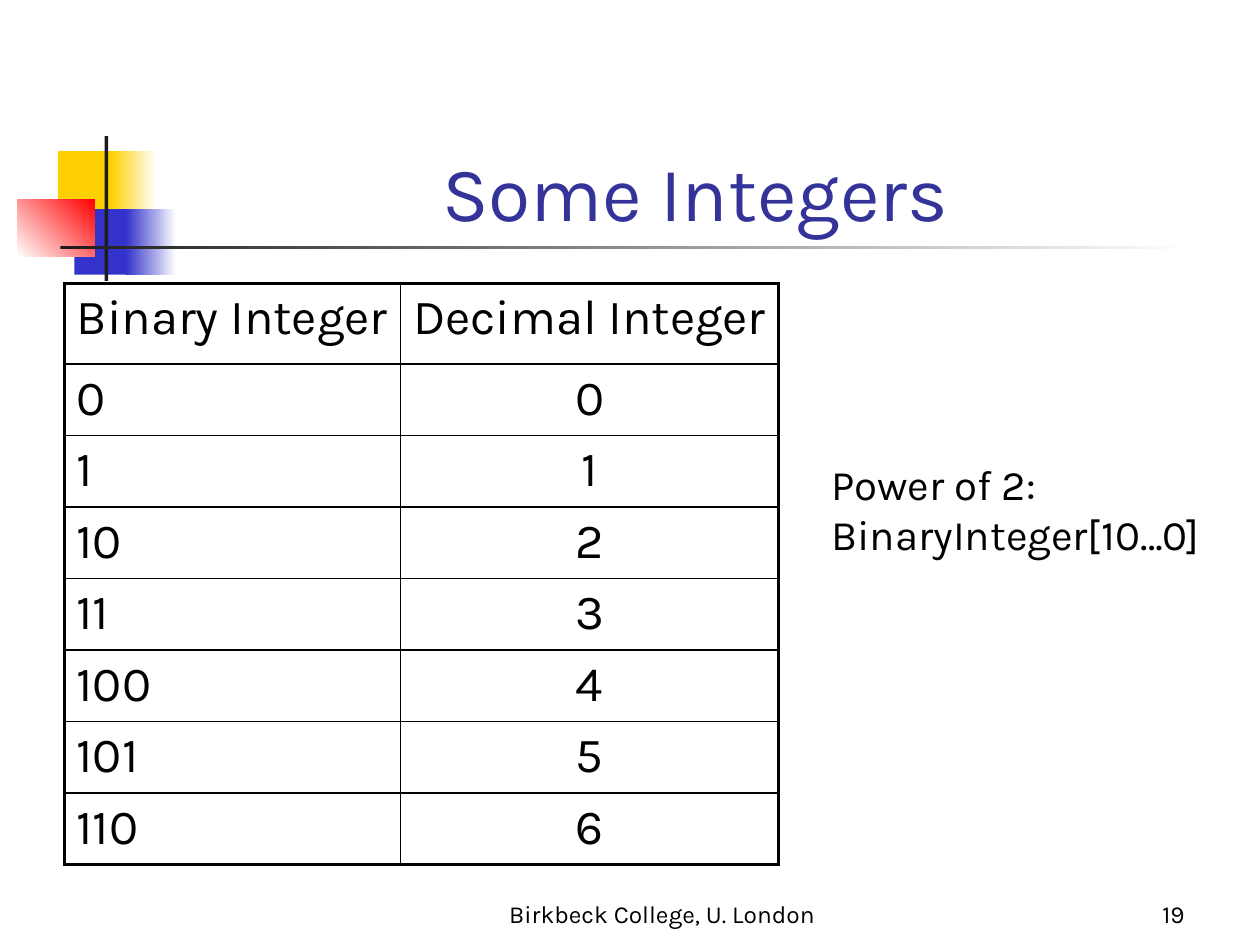
from dataclasses import dataclass

from lxml.etree import SubElement
from pptx import Presentation
from pptx.dml.color import RGBColor
from pptx.enum.shapes import MSO_SHAPE
from pptx.enum.text import MSO_ANCHOR, PP_ALIGN
from pptx.oxml.ns import qn
from pptx.util import Inches, Pt


@dataclass(frozen=True)
class Theme:
    font: str = "Karla"
    text: str = "000000"
    title: str = "333399"
    yellow: str = "FFCF01"
    blue: str = "3333CC"
    red: str = "FF0000"
    dark: str = "1C1C1C"
    white: str = "FFFFFF"
    title_size: float = 44
    table_size: float = 28
    note_size: float = 24
    footer_size: float = 14
    outer_line: float = 2.25
    inner_line: float = 1


class SlideBuilder:
    def __init__(self, page, theme):
        self.page = page
        self.theme = theme

    def format_text(self, frame, size, color, align, before=0):
        for para in frame.paragraphs:
            para.alignment = align
            para.space_before = Pt(before)
            for span in para.runs:
                span.font.name = self.theme.font
                span.font.size = Pt(size)
                span.font.color.rgb = RGBColor.from_string(color)

    def block(self, left, top, width, height, color, end_color=None, angle=0):
        """Borderless rectangle, fading to end_color when one is given."""
        box = self.page.shapes.add_shape(
            MSO_SHAPE.RECTANGLE, *map(Inches, (left, top, width, height)))
        box.shadow.inherit = False
        box.line.fill.background()
        if end_color is None:
            box.fill.solid()
            box.fill.fore_color.rgb = RGBColor.from_string(color)
            return
        box.fill.gradient()
        box.fill.gradient_angle = angle
        for stop, shade in zip(box.fill.gradient_stops, (color, end_color)):
            stop.color.rgb = RGBColor.from_string(shade)

    def text(self, left, top, width, height, words, size, color=None,
             align=PP_ALIGN.LEFT, anchor=MSO_ANCHOR.TOP, wrap=True):
        box = self.page.shapes.add_textbox(
            *map(Inches, (left, top, width, height)))
        frame = box.text_frame
        frame.word_wrap = wrap
        frame.vertical_anchor = anchor
        frame.text = words
        self.format_text(frame, size, color or self.theme.text, align)

    def border(self, cell, side, width):
        line = SubElement(cell._tc.get_or_add_tcPr(), qn(f"a:ln{side}"),
                          w=str(Pt(width)))
        fill = SubElement(line, qn("a:solidFill"))
        SubElement(fill, qn("a:srgbClr"), val=self.theme.text)

    def table(self, left, top, widths, heights, rows):
        theme = self.theme
        frame = self.page.shapes.add_table(
            len(rows), len(widths),
            *map(Inches, (left, top, sum(widths), sum(heights))))
        table = frame.table
        table.first_row = table.horz_banding = False
        for column, width in zip(table.columns, widths):
            column.width = Inches(width)
        for row, height in zip(table.rows, heights):
            row.height = Inches(height)
        for r, values in enumerate(rows):
            for c, value in enumerate(values):
                cell = table.cell(r, c)
                cell.text = value
                centred = r > 0 and c > 0
                self.format_text(
                    cell.text_frame, theme.table_size, theme.text,
                    PP_ALIGN.CENTER if centred else PP_ALIGN.LEFT,
                    before=0.2 * theme.table_size)
                # Heavy lines only on the outside of the grid
                outside = {"L": c == 0, "R": c == len(widths) - 1,
                           "T": r == 0, "B": r == len(rows) - 1}
                for side, is_outer in outside.items():
                    self.border(cell, side, theme.outer_line if is_outer
                                else theme.inner_line)
                cell.fill.background()


def main():
    deck = Presentation()
    deck.slide_width, deck.slide_height = Inches(10), Inches(7.5)
    page = deck.slides.add_slide(deck.slide_layouts[6])
    theme = Theme()
    slide = SlideBuilder(page, theme)

    # Corner decoration and title rule
    slide.block(0.46, 1.2, 0.48, 0.52, theme.yellow)
    slide.block(0.88, 1.2, 0.36, 0.52, theme.yellow, theme.white)
    slide.block(0.59, 1.66, 0.46, 0.52, theme.blue)
    slide.block(1, 1.66, 0.4, 0.52, theme.blue, theme.white)
    slide.block(0.14, 1.58, 0.61, 0.46, theme.white, theme.red, angle=45)
    slide.block(0.83, 1.08, 0.03, 1.15, theme.dark)
    slide.block(0.48, 1.95, 9, 0.03, theme.dark, theme.white)

    # Footer and page number
    slide.text(3.67, 6.92, 3.17, 0.5, "Birkbeck College, U. London",
               theme.footer_size, align=PP_ALIGN.CENTER,
               anchor=MSO_ANCHOR.BOTTOM)
    slide.text(7.42, 6.92, 2.08, 0.5, "19", theme.footer_size,
               align=PP_ALIGN.RIGHT, anchor=MSO_ANCHOR.BOTTOM)

    # Title
    slide.text(1.26, 0.68, 8.52, 1.25, "Some Integers", theme.title_size,
               theme.title, PP_ALIGN.CENTER, MSO_ANCHOR.BOTTOM)

    # Binary and decimal table
    numbers = [(f"{n:b}", str(n)) for n in range(7)]
    header_height, table_height = 0.64, 4.6
    row_height = (table_height - header_height) / len(numbers)
    slide.table(0.51, 2.25, [2.67, 3],
                [header_height] + [row_height] * len(numbers),
                [("Binary Integer", "Decimal Integer")] + numbers)

    # Side note
    slide.text(6.5, 3.59, 3.27, 0.9, "Power of 2:\nBinaryInteger[10…0]",
               theme.note_size, wrap=False)

    deck.save("out.pptx")


if __name__ == "__main__":
    main()
